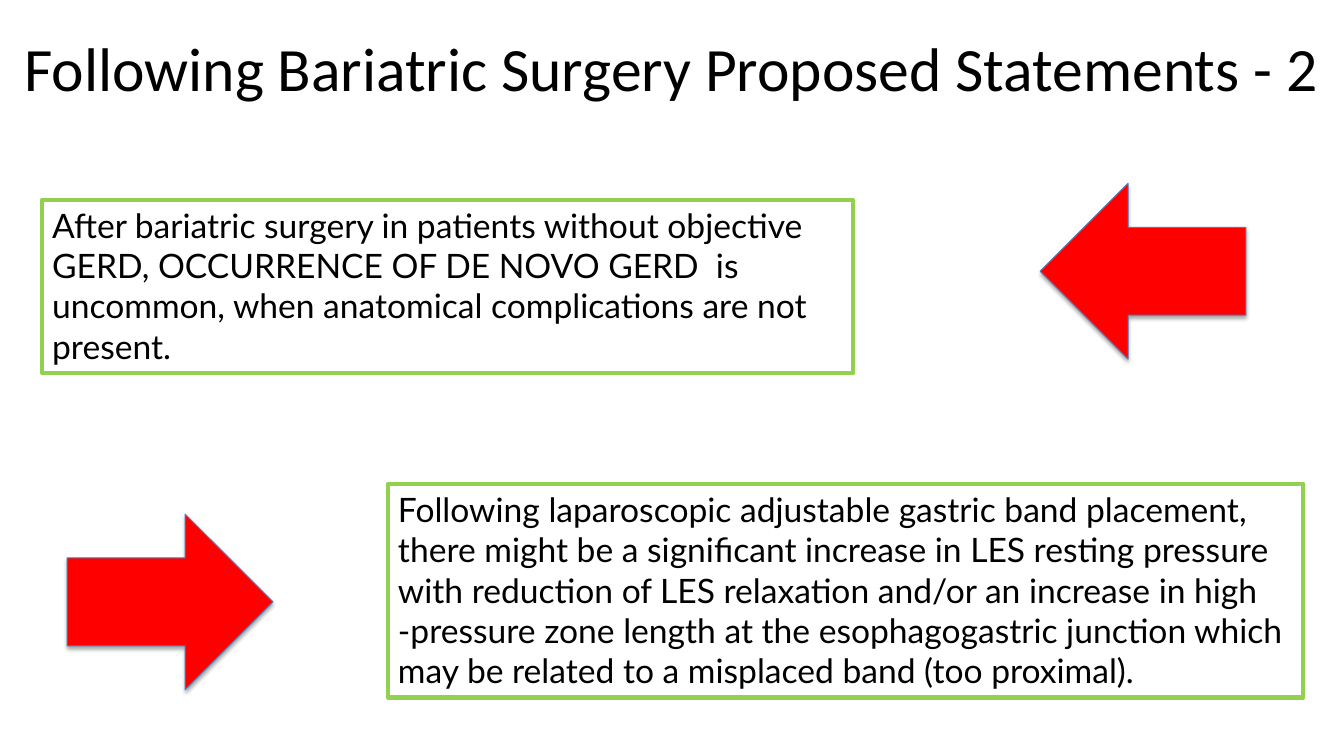
from dataclasses import dataclass

from lxml.etree import SubElement
from pptx import Presentation
from pptx.dml.color import RGBColor
from pptx.enum.shapes import MSO_SHAPE
from pptx.enum.text import MSO_ANCHOR, MSO_AUTO_SIZE, PP_ALIGN
from pptx.oxml.ns import qn
from pptx.slide import Slide
from pptx.text.text import TextFrame
from pptx.util import Pt

ARROW_WIDTH, ARROW_HEIGHT = 147, 125.5


@dataclass(frozen=True)
class Statement:
    left: float
    top: float
    width: float
    height: float
    text: str


@dataclass(frozen=True)
class Arrow:
    left: float
    top: float
    rotation: float


STATEMENTS = [
    Statement(
        30.2, 142.6, 579, 123.8,
        "After bariatric surgery in patients without objective GERD, "
        "OCCURRENCE OF DE NOVO GERD  is uncommon, when anatomical "
        "complications are not present.",
    ),
    Statement(
        277.2, 345.6, 653.8, 152.6,
        "Following laparoscopic adjustable gastric band placement, there might "
        "be a significant increase in LES resting pressure with reduction of "
        "LES relaxation and/or an increase in high -pressure zone length at the "
        "esophagogastric junction which may be related to a misplaced band "
        "(too proximal).",
    ),
]
ARROWS = [Arrow(743, 131, 180), Arrow(48, 367.2, 0)]


def color(value: str) -> RGBColor:
    return RGBColor.from_string(value)


def write(frame: TextFrame, text: str, font: str, size: float, alignment: PP_ALIGN) -> None:
    frame.word_wrap = True
    paragraph = frame.paragraphs[0]
    paragraph.alignment = alignment
    run = paragraph.add_run()
    run.text = text
    run.font.name = font
    run.font.size = Pt(size)
    run.font.color.rgb = color("000000")


def add_title(slide: Slide, text: str) -> None:
    shape = slide.shapes.add_textbox(Pt(0), Pt(2.9), Pt(960), Pt(90))
    shape.text_frame.vertical_anchor = MSO_ANCHOR.MIDDLE
    write(shape.text_frame, text, "Calibri", 44, PP_ALIGN.CENTER)


def add_statement(slide: Slide, statement: Statement) -> None:
    shape = slide.shapes.add_textbox(
        Pt(statement.left), Pt(statement.top), Pt(statement.width), Pt(statement.height)
    )
    shape.line.color.rgb = color("92D050")
    shape.line.width = Pt(3)
    write(shape.text_frame, statement.text, "Lato", 24, PP_ALIGN.LEFT)
    shape.text_frame.auto_size = MSO_AUTO_SIZE.SHAPE_TO_FIT_TEXT


def add_arrow(slide: Slide, arrow: Arrow) -> None:
    shape = slide.shapes.add_shape(
        MSO_SHAPE.RIGHT_ARROW,
        Pt(arrow.left), Pt(arrow.top), Pt(ARROW_WIDTH), Pt(ARROW_HEIGHT),
    )
    shape.rotation = arrow.rotation
    shape.fill.solid()
    shape.fill.fore_color.rgb = color("FF0000")
    shape.line.color.rgb = color("4B7EBC")
    shape.line.width = Pt(0.75)
    shape.shadow.inherit = False
    effects = shape.element.spPr.find(qn("a:effectLst"))
    shadow = SubElement(
        effects, qn("a:outerShdw"),
        blurRad=str(Pt(3.1)), dist=str(Pt(1.8)), dir="5400000", rotWithShape="0",
    )
    shade = SubElement(shadow, qn("a:srgbClr"), val="000000")
    SubElement(shade, qn("a:alpha"), val="35000")


def main() -> None:
    presentation = Presentation()
    presentation.slide_width = Pt(960)
    presentation.slide_height = Pt(540)
    slide = presentation.slides.add_slide(presentation.slide_layouts[6])
    add_title(slide, "Following Bariatric Surgery Proposed Statements - 2")
    for statement in STATEMENTS:
        add_statement(slide, statement)
    for arrow in ARROWS:
        add_arrow(slide, arrow)
    presentation.save("out.pptx")


if __name__ == "__main__":
    main()
